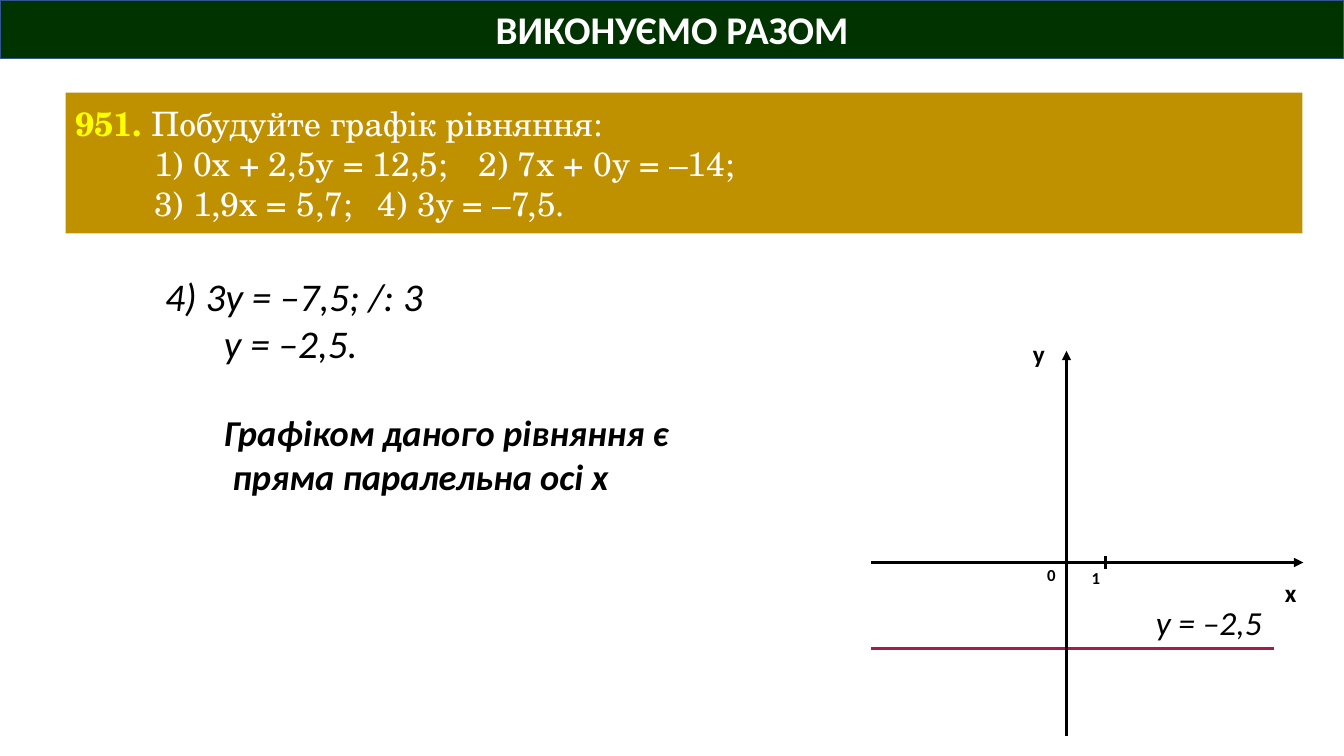
"""Build the slide on drawing the graph of an equation parallel to the x axis."""
from dataclasses import dataclass

from lxml.etree import SubElement
from pptx import Presentation
from pptx.dml.color import RGBColor
from pptx.enum.shapes import MSO_CONNECTOR, MSO_SHAPE
from pptx.enum.text import MSO_ANCHOR, PP_ALIGN
from pptx.oxml.ns import qn
from pptx.shapes.autoshape import Shape
from pptx.slide import Slide
from pptx.text.text import TextFrame
from pptx.util import Pt

BLACK = RGBColor(0x00, 0x00, 0x00)
WHITE = RGBColor(0xFF, 0xFF, 0xFF)
YELLOW = RGBColor(0xFF, 0xFF, 0x00)
GREEN = RGBColor(0x00, 0x33, 0x00)
GOLD = RGBColor(0xBF, 0x90, 0x00)
BLUE = RGBColor(0x32, 0x54, 0x91)
CRIMSON = RGBColor(0xA5, 0x1B, 0x49)

SCHOOL_FONT = "TeX Gyre Schola"
AXIS_LEFT, ORIGIN_X, ORIGIN_Y = 622, 761.8, 401.8
GRAPH_Y = 463
UNIT_X, TICK_HALF = 789.8, 4.3
FIRST_INDENT = 56.2
SECOND_COLUMN = 386


@dataclass(frozen=True)
class Span:
    text: str
    size: float
    color: RGBColor = BLACK
    bold: bool = False
    italic: bool = False
    font: str = "Calibri"


@dataclass(frozen=True)
class Para:
    spans: tuple[Span, ...]
    indent: float = 0
    before: float = 0
    align: PP_ALIGN = PP_ALIGN.LEFT
    tab: float = 0


@dataclass(frozen=True)
class TextBox:
    left: float
    top: float
    width: float
    height: float
    paras: tuple[Para, ...]


@dataclass(frozen=True)
class Banner:
    box: TextBox
    fill: RGBColor
    outline: RGBColor | None = None


@dataclass(frozen=True)
class Line:
    start: tuple[float, float]
    end: tuple[float, float]
    color: RGBColor = BLACK
    arrow: bool = False


def label(left: float, top: float, width: float, span: Span) -> TextBox:
    """Describe a one-line label."""
    return TextBox(left, top, width, span.size * 1.2 + 7.2, (Para((span,)),))


def task(text: str, indent: float = FIRST_INDENT) -> Para:
    """Describe one line of the exercise with two columns."""
    span = Span(text, 24, WHITE, font=SCHOOL_FONT)
    return Para((span,), indent, align=PP_ALIGN.JUSTIFY, tab=SECOND_COLUMN)


SOLUTION = TextBox(110.9, 190.8, 378, 232.6, (
    Para((Span("4) 3у = –7,5; /: 3", 28, italic=True),)),
    Para((Span("у = –2,5.", 28, italic=True),), 42),
    Para((Span("Графіком даного рівняння є", 26, bold=True, italic=True),), 42, 31.7),
    Para((Span("пряма паралельна осі х", 26, bold=True, italic=True),), 48),
))

LABELS = (
    label(740.9, 399.6, 21, Span("0", 12, bold=True)),
    label(772.6, 401.8, 21, Span("1", 12, bold=True)),
    label(818.6, 426.2, 105, Span("у = –2,5", 24, italic=True)),
    label(730.8, 238.3, 28, Span("у", 18, bold=True)),
    label(910.8, 409, 28, Span("х", 18, bold=True)),
)

LINES = (
    Line((910, GRAPH_Y), (AXIS_LEFT, GRAPH_Y), CRIMSON),
    Line((ORIGIN_X, 525.6), (ORIGIN_X, 250.6), arrow=True),
    Line((UNIT_X, ORIGIN_Y + TICK_HALF), (UNIT_X, ORIGIN_Y - TICK_HALF)),
    Line((AXIS_LEFT, ORIGIN_Y), (931, ORIGIN_Y), arrow=True),
)

BANNERS = (
    Banner(TextBox(0, 0, 960, 41.8, (
        Para((Span("ВИКОНУЄМО РАЗОМ", 28, WHITE, bold=True),), align=PP_ALIGN.CENTER),
    )), GREEN, BLUE),
    Banner(TextBox(46.8, 66.2, 883.6, 100.5, (
        Para((
            Span("951. ", 24, YELLOW, bold=True, font=SCHOOL_FONT),
            Span("Побудуйте графік рівняння:", 24, WHITE, font=SCHOOL_FONT),
        ), align=PP_ALIGN.JUSTIFY),
        task("1) 0х + 2,5у = 12,5;\t2) 7х + 0у = –14;"),
        task("3) 1,9x = 5,7;\t4) 3у = –7,5."),
    )), GOLD),
)


def write_paras(frame: TextFrame, paras: tuple[Para, ...]) -> None:
    """Fill a text frame paragraph by paragraph and run by run."""
    frame.word_wrap = True
    for index, para in enumerate(paras):
        paragraph = frame.add_paragraph() if index else frame.paragraphs[0]
        paragraph.alignment = para.align
        if para.before:
            paragraph.space_before = Pt(para.before)
        properties = paragraph._p.get_or_add_pPr()
        properties.set("marL", "0")
        properties.set("indent", str(Pt(para.indent)))
        if para.tab:
            stops = SubElement(properties, qn("a:tabLst"))
            SubElement(stops, qn("a:tab"), pos=str(Pt(para.tab)), algn="l")
        for span in para.spans:
            run = paragraph.add_run()
            run.text = span.text
            run.font.name = span.font
            run.font.size = Pt(span.size)
            run.font.bold = span.bold
            run.font.italic = span.italic
            run.font.color.rgb = span.color


def draw_text(page: Slide, box: TextBox) -> Shape:
    """Draw a plain text box."""
    shape = page.shapes.add_textbox(Pt(box.left), Pt(box.top), Pt(box.width), Pt(box.height))
    write_paras(shape.text_frame, box.paras)
    return shape


def draw_banner(page: Slide, banner: Banner) -> Shape:
    """Draw a filled rectangle with text."""
    box = banner.box
    shape = page.shapes.add_shape(
        MSO_SHAPE.RECTANGLE, Pt(box.left), Pt(box.top), Pt(box.width), Pt(box.height))
    shape.shadow.inherit = False
    shape.fill.solid()
    shape.fill.fore_color.rgb = banner.fill
    if banner.outline is None:
        shape.line.fill.background()
    else:
        shape.line.color.rgb = banner.outline
        shape.line.width = Pt(1)
    shape.text_frame.vertical_anchor = MSO_ANCHOR.MIDDLE
    write_paras(shape.text_frame, box.paras)
    return shape


def draw_line(page: Slide, line: Line) -> None:
    """Draw a straight line, with an arrowhead at its end if asked."""
    connector = page.shapes.add_connector(
        MSO_CONNECTOR.STRAIGHT, *(Pt(value) for value in line.start + line.end))
    connector.line.color.rgb = line.color
    connector.line.width = Pt(2.25)
    if line.arrow:
        SubElement(connector.line._get_or_add_ln(), qn("a:tailEnd"), type="triangle")
    SubElement(connector._element.spPr, qn("a:effectLst"))


def main() -> None:
    """Build and save the deck."""
    deck = Presentation()
    deck.slide_width, deck.slide_height = Pt(960), Pt(540)
    page = deck.slides.add_slide(deck.slide_layouts[6])
    for line in LINES:
        draw_line(page, line)
    for box in (SOLUTION, *LABELS):
        draw_text(page, box)
    for banner in BANNERS:
        draw_banner(page, banner)
    deck.save("out.pptx")


if __name__ == "__main__":
    main()
